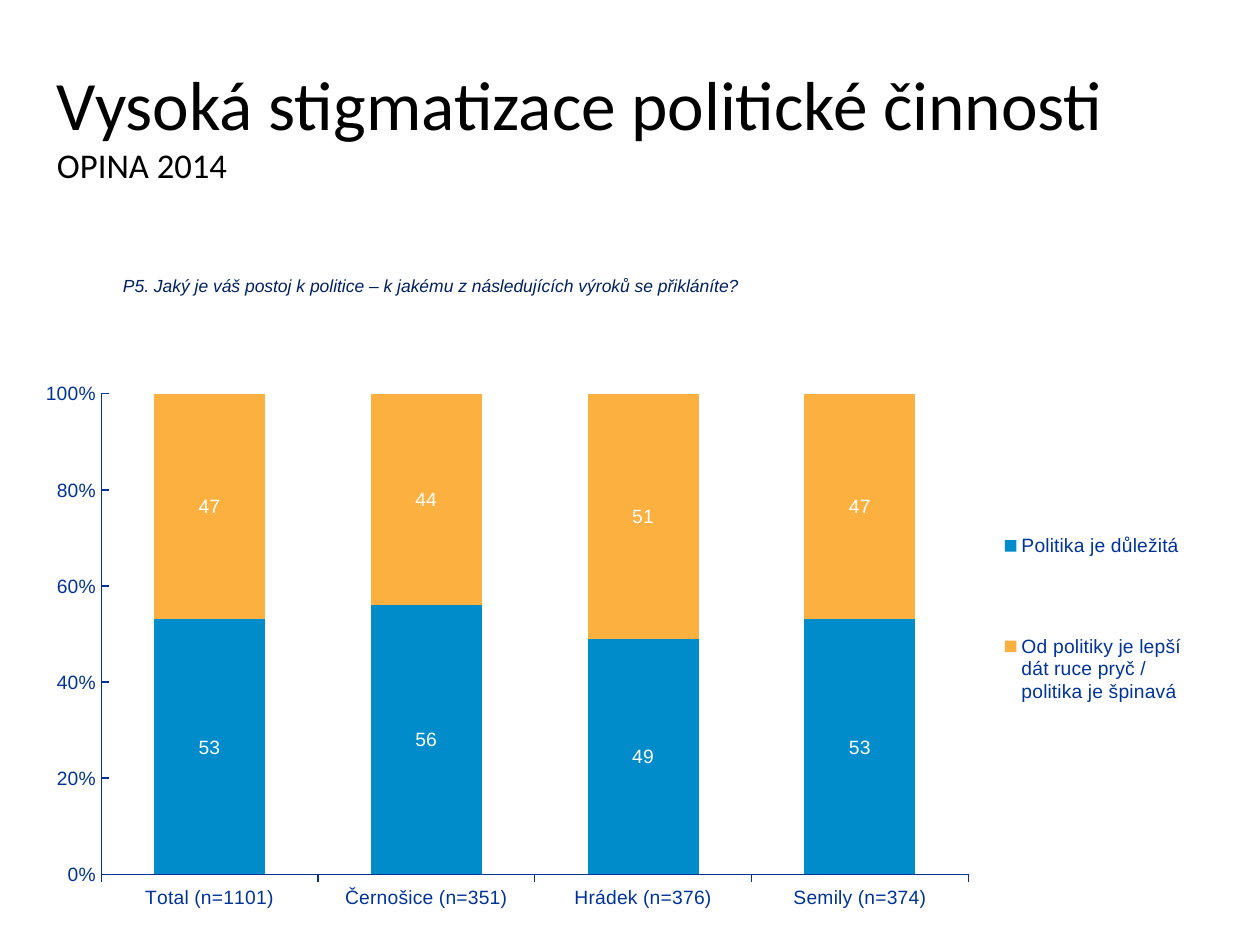
from dataclasses import dataclass

from lxml import etree
from pptx import Presentation
from pptx.chart.data import CategoryChartData
from pptx.dml.color import RGBColor
from pptx.enum.chart import (XL_CHART_TYPE, XL_LABEL_POSITION,
                             XL_LEGEND_POSITION, XL_TICK_MARK)
from pptx.enum.text import MSO_ANCHOR, MSO_AUTO_SIZE, PP_ALIGN
from pptx.oxml.ns import qn
from pptx.util import Emu, Pt

STACKED = XL_CHART_TYPE.COLUMN_STACKED_100
CENTER_LABEL = XL_LABEL_POSITION.CENTER
LEGEND_TOP = XL_LEGEND_POSITION.TOP
TICK_IN, TICK_OUT = XL_TICK_MARK.INSIDE, XL_TICK_MARK.OUTSIDE
NO_TICK = XL_TICK_MARK.NONE
ANCHOR_TOP, ALIGN_LEFT = MSO_ANCHOR.TOP, PP_ALIGN.LEFT
NO_AUTOFIT = MSO_AUTO_SIZE.NONE

EMU_PER_PX = 914400 / 126
TITLE_ONLY_LAYOUT = 5


@dataclass(frozen=True)
class Theme:
    title_font: str = "Calibri"
    body_font: str = "Arial"
    title_size: float = 39.6
    subtitle_size: float = 19.8
    question_size: float = 10
    chart_size: float = 11
    title: str = "000000"
    question: str = "002060"
    axis: str = "003399"
    label: str = "FFFFFF"
    important: str = "008BCA"
    dirty: str = "FBB040"


THEME = Theme()

CATEGORIES = ["Total (n=1101)", "Černošice (n=351)",
              "Hrádek (n=376)", "Semily (n=374)"]
SERIES = [
    ("Politika je důležitá", [53, 56, 49, 53], THEME.important),
    ("Od politiky je lepší dát ruce pryč / politika je špinavá",
     [47, 44, 51, 47], THEME.dirty),
]


def px(length):
    return Emu(round(length * EMU_PER_PX))


def set_font(font, name, size, color, italic=False):
    font.name = name
    font.size = Pt(size)
    font.color.rgb = RGBColor.from_string(color)
    font.bold = False
    font.italic = italic


def write_text(paragraph, text, **font_format):
    run = paragraph.add_run()
    run.text = text
    set_font(run.font, **font_format)


def prepare_frame(text_frame, margins):
    """Set wrapping, anchor and left, top, right, bottom margins in px."""
    text_frame.word_wrap = True
    text_frame.auto_size = NO_AUTOFIT
    text_frame.vertical_anchor = ANCHOR_TOP
    (text_frame.margin_left, text_frame.margin_top,
     text_frame.margin_right, text_frame.margin_bottom) = map(px, margins)
    paragraph = text_frame.paragraphs[0]
    paragraph.alignment = ALIGN_LEFT
    return paragraph


def fill_title(slide, title, subtitle):
    shape = slide.shapes.title
    shape.left, shape.top, shape.width, shape.height = map(
        px, (44, 38, 1160, 206))
    paragraph = prepare_frame(shape.text_frame, (13, 23, 13, 6))
    write_text(paragraph, title, name=THEME.title_font,
               size=THEME.title_size, color=THEME.title)
    paragraph.add_line_break()
    write_text(paragraph, subtitle, name=THEME.title_font,
               size=THEME.subtitle_size, color=THEME.title)


def add_question(slide, text):
    shape = slide.shapes.add_textbox(*map(px, (118, 275, 1086, 26)))
    paragraph = prepare_frame(shape.text_frame, (5, 0, 5, 5))
    write_text(paragraph, text, name=THEME.body_font,
               size=THEME.question_size, color=THEME.question, italic=True)


def set_layout(element, x, y, width, height, inner=False):
    """Place a plot area or legend by fractions of the chart."""
    layout = element.find(qn("c:layout"))
    if layout is None:
        layout = etree.Element(qn("c:layout"))
        position = element.find(qn("c:legendPos"))
        if position is None:
            element.insert(0, layout)
        else:
            position.addnext(layout)
    manual = etree.SubElement(layout, qn("c:manualLayout"))
    settings = [("layoutTarget", "inner")] if inner else []
    settings += [("xMode", "edge"), ("yMode", "edge"),
                 ("x", x), ("y", y), ("w", width), ("h", height)]
    for tag, value in settings:
        etree.SubElement(manual, qn(f"c:{tag}")).set("val", str(value))


def style_axis(axis, tick_mark):
    axis.has_major_gridlines = False
    axis.major_tick_mark = tick_mark
    axis.minor_tick_mark = NO_TICK
    axis.format.line.color.rgb = RGBColor.from_string(THEME.axis)
    axis.format.line.width = Pt(0.75)
    set_font(axis.tick_labels.font, THEME.body_font,
             THEME.chart_size, THEME.axis)


def style_series(series, color):
    series.format.fill.solid()
    series.format.fill.fore_color.rgb = RGBColor.from_string(color)
    labels = series.data_labels
    labels.show_value = True
    labels.number_format = "#,##0"
    labels.number_format_is_linked = False
    labels.position = CENTER_LABEL
    set_font(labels.font, THEME.body_font, THEME.chart_size, THEME.label)


def add_attitude_chart(slide):
    data = CategoryChartData()
    data.categories = CATEGORIES
    for name, values, _ in SERIES:
        data.add_series(name, values)
    chart = slide.shapes.add_chart(
        STACKED, *map(px, (18, 294, 1188, 624)), data).chart
    chart.has_title = False
    set_font(chart.font, THEME.body_font, THEME.chart_size, THEME.axis)

    # Columns
    plot = chart.plots[0]
    plot.gap_width = 95
    plot.overlap = 100
    plot.vary_by_categories = False
    for series, (_, _, color) in zip(plot.series, SERIES):
        style_series(series, color)
    set_layout(chart._chartSpace.chart.plotArea,
               0.07, 0.16, 0.73, 0.77, inner=True)

    # Axes
    style_axis(chart.category_axis, TICK_OUT)
    value_axis = chart.value_axis
    style_axis(value_axis, TICK_IN)
    value_axis.minimum_scale = 0
    value_axis.maximum_scale = 1
    value_axis.major_unit = 0.2
    value_axis.tick_labels.number_format = "0%"
    value_axis.tick_labels.number_format_is_linked = False

    # Legend
    chart.has_legend = True
    legend = chart.legend
    legend.position = LEGEND_TOP
    legend.include_in_layout = False
    set_font(legend.font, THEME.body_font, THEME.chart_size, THEME.axis)
    set_layout(legend._element, 0.82, 0.26, 0.17, 0.52)


def main():
    presentation = Presentation()
    presentation.slide_width = px(1260)
    presentation.slide_height = px(945)
    layout = presentation.slide_layouts[TITLE_ONLY_LAYOUT]
    slide = presentation.slides.add_slide(layout)

    fill_title(slide, "Vysoká stigmatizace politické činnosti", "OPINA 2014")
    add_attitude_chart(slide)
    add_question(slide, "P5. Jaký je váš postoj k politice – k jakému "
                        "z následujících výroků se přikláníte?")
    presentation.save("out.pptx")


if __name__ == "__main__":
    main()
